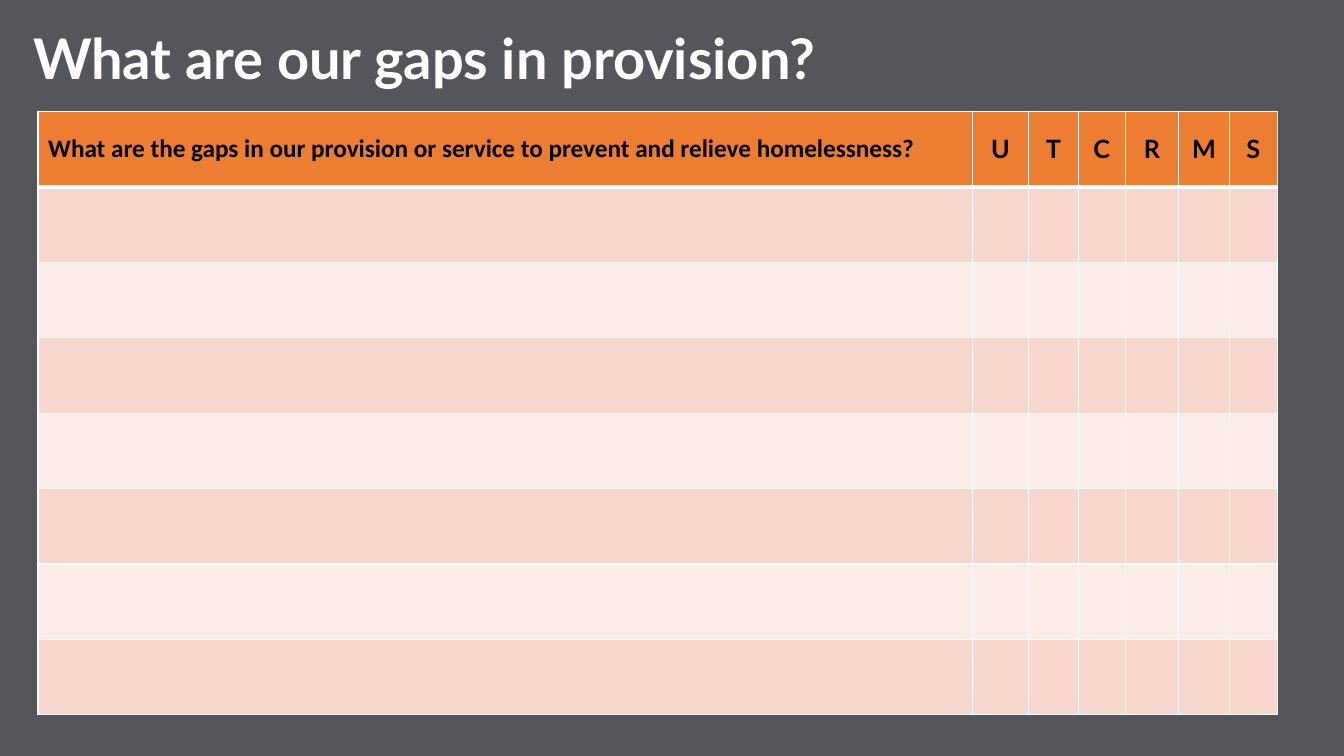
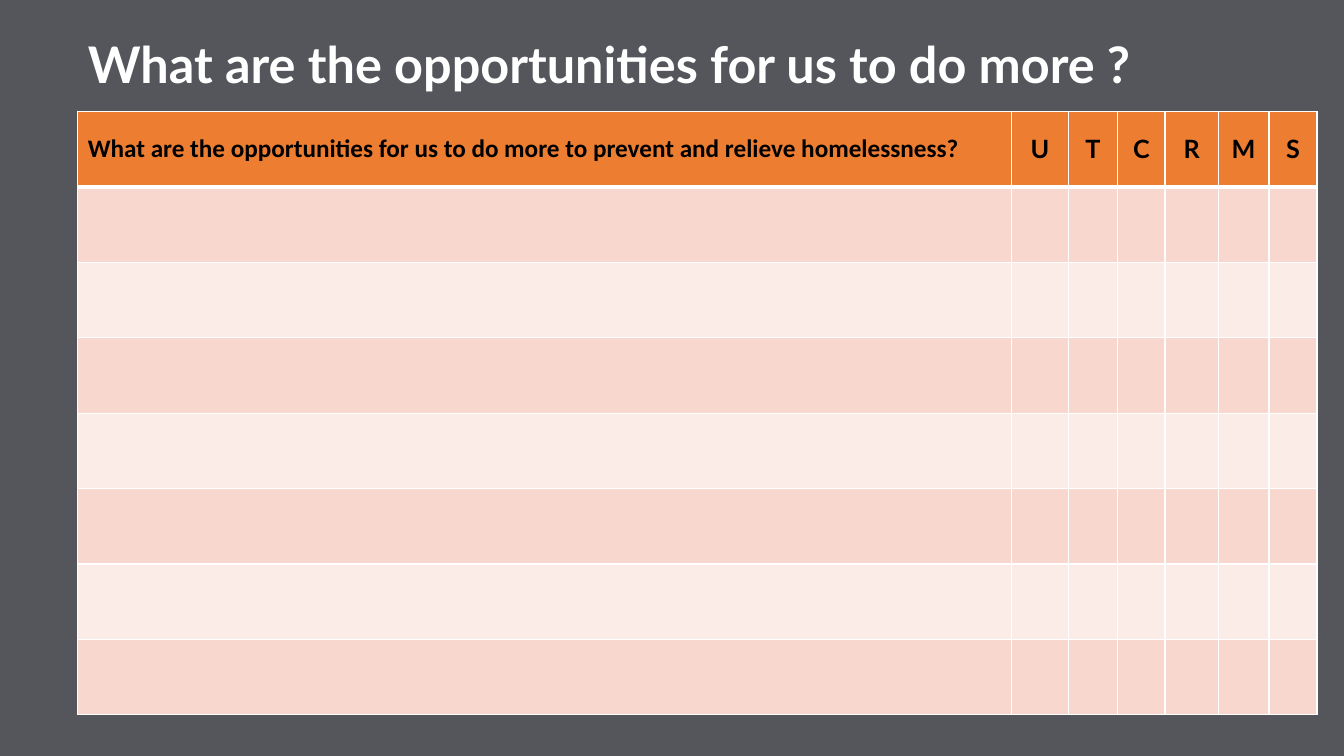
import dataclasses

import pptx
import pptx.dml.color
import pptx.enum.text
import pptx.oxml
import pptx.oxml.ns
import pptx.util

Cm = pptx.util.Cm
Pt = pptx.util.Pt
ALIGN = pptx.enum.text.PP_ALIGN
ANCHOR = pptx.enum.text.MSO_ANCHOR


@dataclasses.dataclass(frozen=True)
class Theme:
    backdrop: str = "54565B"
    title: str = "FFFFFF"
    grid: str = "FFFFFF"
    header: str = "ED7D31"
    header_text: str = "000000"
    bands: tuple = ("F8D7CE", "FCECE8")
    display_font: str = "Lato"
    question_font: str = "Calibri"
    title_size: int = 40
    long_title_size: int = 36
    header_size: int = 18
    grid_width: int = 1
    header_rule_width: int = 3


def apply(target, values):
    for name, value in values.items():
        setattr(target, name, value)


def paint(fill, colour):
    fill.solid()
    fill.fore_color.rgb = pptx.dml.color.RGBColor.from_string(colour)


class Deck:
    def __init__(self, theme):
        self.theme = theme
        self.presentation = pptx.Presentation()
        apply(self.presentation, {"slide_width": Cm(33.87), "slide_height": Cm(19.05)})
        paint(self.presentation.slide_master.background.fill, theme.backdrop)
        self.slide = None

    def add_slide(self):
        title_only = self.presentation.slide_layouts[5]
        self.slide = self.presentation.slides.add_slide(title_only)

    def set_text(self, frame, text, font, size, colour, align, **spacing):
        frame.text = text
        paragraph = frame.paragraphs[0]
        apply(paragraph, {"alignment": align, **spacing})
        run_font = paragraph.runs[0].font
        apply(run_font, {"name": font, "size": Pt(size), "bold": True})
        run_font.color.rgb = pptx.dml.color.RGBColor.from_string(colour)

    def add_title(self, text, left, top, width, height, size):
        title = self.slide.shapes.title
        apply(title, {"left": Cm(left), "top": Cm(top), "width": Cm(width), "height": Cm(height)})
        apply(title.text_frame, {
            "auto_size": pptx.enum.text.MSO_AUTO_SIZE.NONE,
            "vertical_anchor": ANCHOR.BOTTOM,
            "word_wrap": True,
        })
        self.set_text(title.text_frame, text, self.theme.display_font, size,
                      self.theme.title, ALIGN.LEFT, line_spacing=0.9)

    def border(self, cell, row):
        theme = self.theme
        widths = dict.fromkeys(("lnL", "lnR", "lnT", "lnB"), theme.grid_width)
        if row < 2:
            widths["lnB" if row == 0 else "lnT"] = theme.header_rule_width
        properties = cell._tc.get_or_add_tcPr()
        for side, width in widths.items():
            properties.append(pptx.oxml.parse_xml(
                f'<a:{side} {pptx.oxml.ns.nsdecls("a")} w="{Pt(width)}"><a:solidFill>'
                f'<a:srgbClr val="{theme.grid}"/></a:solidFill></a:{side}>'))

    def add_worksheet(self, question, left, top=2.81):
        theme = self.theme
        headings = (question, *"UTCRMS")
        widths = (23.54, 1.42, 1.25, 1.19, 1.34, 1.28, 1.21)
        row_count, row_height = 8, 1.9
        worksheet = self.slide.shapes.add_table(
            row_count, len(headings), Cm(left), Cm(top),
            Cm(sum(widths)), Cm(row_count * row_height)).table
        apply(worksheet, {"first_row": False, "horz_banding": False})
        for column, width in zip(worksheet.columns, widths):
            column.width = Cm(width)
        for row_index, row in enumerate(worksheet.rows):
            row.height = Cm(row_height)
            colour = theme.bands[(row_index - 1) % 2] if row_index else theme.header
            for cell in row.cells:
                self.border(cell, row_index)
                paint(cell.fill, colour)
        for index, heading in enumerate(headings):
            cell = worksheet.cell(0, index)
            cell.vertical_anchor = ANCHOR.MIDDLE
            self.set_text(cell.text_frame, heading,
                          theme.display_font if index else theme.question_font,
                          theme.header_size, theme.header_text,
                          ALIGN.CENTER if index else ALIGN.LEFT)


def main():
    theme = Theme()
    deck = Deck(theme)

    deck.add_slide()
    deck.add_title("What are our gaps in provision?",
                   0.58, 0.51, 22.02, 1.93, theme.title_size)
    deck.add_worksheet(
        "What are the gaps in our provision or service to prevent and relieve homelessness?", 0.96)

    deck.add_slide()
    deck.add_title("What are the opportunities for us to do more ?",
                   1.96, 0.61, 28.5, 1.9, theme.long_title_size)
    deck.add_worksheet(
        "What are the opportunities for us to do more to prevent and relieve homelessness?", 1.96)

    deck.presentation.save("out.pptx")


if __name__ == "__main__":
    main()
